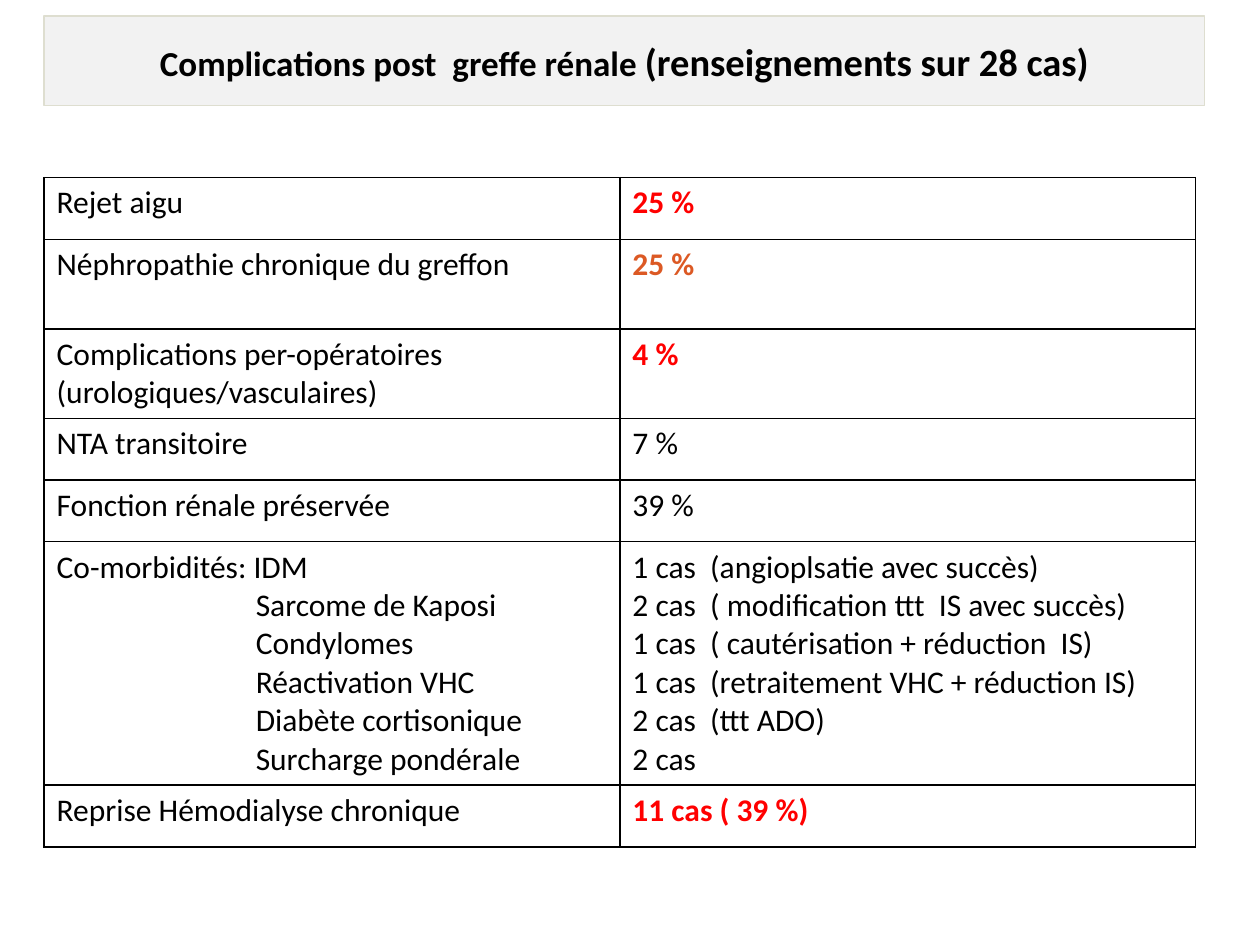
from lxml import etree
from pptx import Presentation
from pptx import util as u
from pptx.dml.color import RGBColor
from pptx.enum import shapes, text
from pptx.oxml.ns import qn

COLORS = {"black": "000000", "red": "FF0000", "orange": "DC5924",
          "white": "FFFFFF", "banner": "F2F2F2", "banner_line": "DEDED0"}
FONT = "Calibri"
WIDTH, HEIGHT = u.Inches(10), u.Inches(7.5)
SUB_INDENT = u.Inches(1.58)

TITLE = [("Complications post  greffe rénale ", 20),
         ("(renseignements sur 28 cas)", 22)]

# Label lines, value lines, value colour, row height in inches
ROWS = [
    (["Rejet aigu"], ["25 %"], "red", 0.49),
    (["Néphropathie chronique du greffon"], ["25 %"], "orange", 0.71),
    (["Complications per-opératoires (urologiques/vasculaires)"], ["4 %"], "red", 0.71),
    (["NTA transitoire"], ["7 %"], "black", 0.49),
    (["Fonction rénale préservée"], ["39 %"], "black", 0.49),
    (["Co-morbidités: IDM", "Sarcome de Kaposi", "Condylomes",
      "Réactivation VHC", "Diabète cortisonique", "Surcharge pondérale"],
     ["1 cas  (angioplsatie avec succès)",
      "2 cas  ( modification ttt  IS avec succès)",
      "1 cas  ( cautérisation + réduction  IS)",
      "1 cas  (retraitement VHC + réduction IS)",
      "2 cas  (ttt ADO)", "2 cas"], "black", 1.93),
    (["Reprise Hémodialyse chronique"], ["11 cas ( 39 %)"], "red", 0.49),
]


def rgb(name):
    return RGBColor.from_string(COLORS[name])


def share_box(left, top, width, height):
    """Turn shares of the slide's size into lengths."""
    return (int(left * WIDTH), int(top * HEIGHT),
            int(width * WIDTH), int(height * HEIGHT))


def add_banner(slide, box):
    banner = slide.shapes.add_shape(shapes.MSO_SHAPE.RECTANGLE, *box)
    banner.shadow.inherit = False
    banner.fill.solid()
    banner.fill.fore_color.rgb = rgb("banner")
    banner.line.color.rgb = rgb("banner_line")
    banner.line.width = u.Pt(0.75)
    frame = banner.text_frame
    frame.word_wrap = True
    frame.vertical_anchor = text.MSO_ANCHOR.MIDDLE
    paragraph = frame.paragraphs[0]
    paragraph.alignment = text.PP_ALIGN.CENTER
    paragraph.font.name = FONT
    paragraph.font.bold = True
    paragraph.font.color.rgb = rgb("black")
    for words, size in TITLE:
        run = paragraph.add_run()
        run.text = words
        run.font.size = u.Pt(size)


def set_borders(cell):
    properties = cell._tc.get_or_add_tcPr()
    for index, side in enumerate(("lnL", "lnR", "lnT", "lnB")):
        line = etree.Element(qn(f"a:{side}"), w=str(u.Pt(1)))
        fill = etree.SubElement(line, qn("a:solidFill"))
        etree.SubElement(fill, qn("a:srgbClr"), val=COLORS["black"])
        properties.insert(index, line)


def fill_cell(cell, lines, color="black", sub_indent=0):
    cell.fill.solid()
    cell.fill.fore_color.rgb = rgb("white")
    set_borders(cell)
    cell.text = "\n".join(lines)
    for index, paragraph in enumerate(cell.text_frame.paragraphs):
        font = paragraph.font
        font.name, font.size = FONT, u.Pt(18)
        font.bold = color != "black"
        font.color.rgb = rgb(color)
        if index and sub_indent:
            paragraph._p.get_or_add_pPr().set("marL", str(sub_indent))


def add_complications(slide, box):
    table = slide.shapes.add_table(len(ROWS), 2, *box).table
    table.first_row = table.horz_banding = False
    for column in table.columns:
        column.width = box[2] // 2
    for index, (labels, values, color, height) in enumerate(ROWS):
        table.rows[index].height = u.Inches(height)
        fill_cell(table.cell(index, 0), labels, sub_indent=SUB_INDENT)
        fill_cell(table.cell(index, 1), values, color)


def main():
    presentation = Presentation()
    presentation.slide_width, presentation.slide_height = WIDTH, HEIGHT
    slide = presentation.slides.add_slide(presentation.slide_layouts[6])
    add_banner(slide, share_box(0.035, 0.017, 0.921, 0.095))
    add_complications(slide, share_box(0.035, 0.188, 0.914, 0.708))
    presentation.save("out.pptx")


if __name__ == "__main__":
    main()
